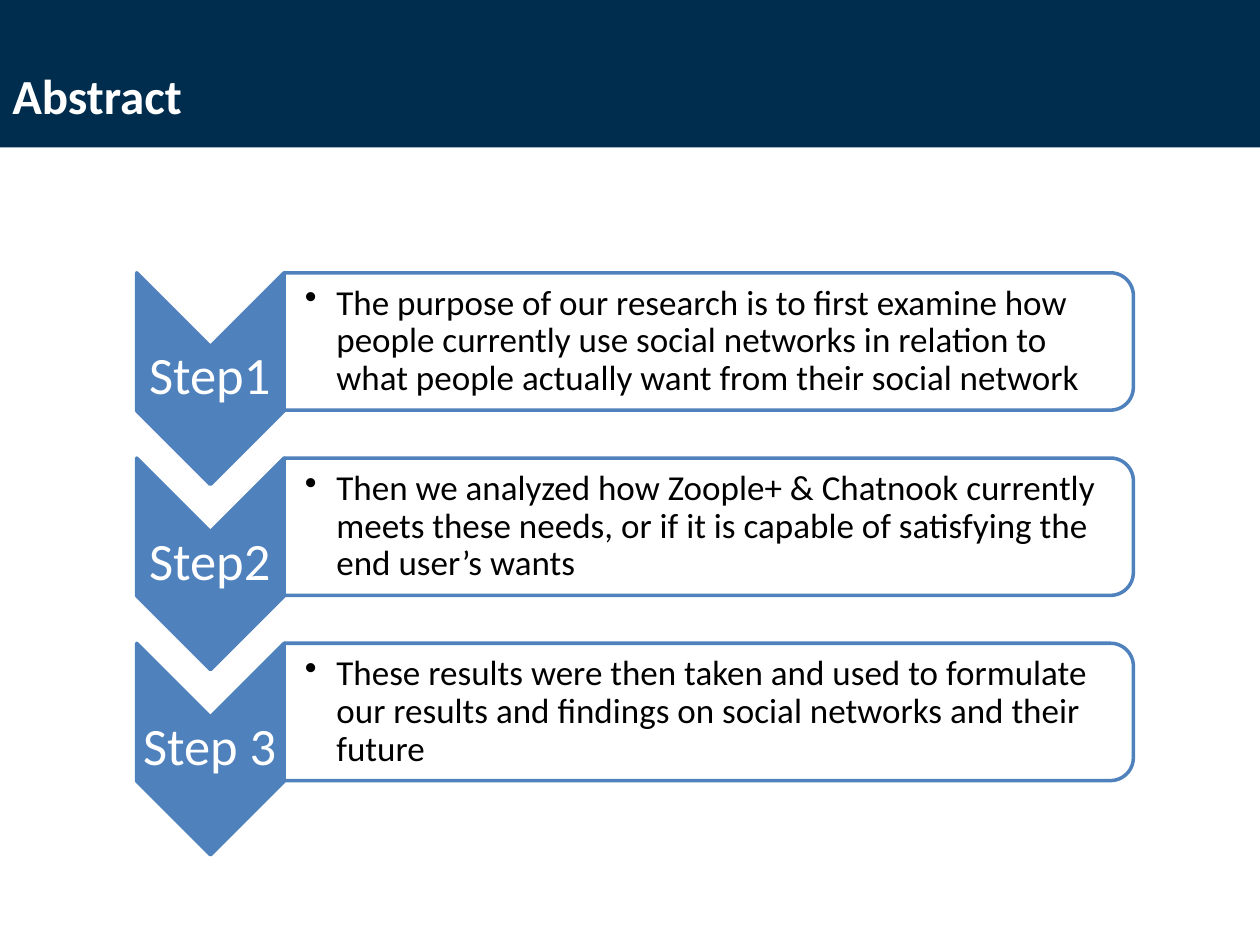
"""Build the abstract slide: a title band and three chevron steps."""
from dataclasses import dataclass

from lxml import etree
from pptx import Presentation
from pptx import util as u
from pptx.dml.color import RGBColor
from pptx.enum import shapes, text
from pptx.oxml.ns import qn


@dataclass(frozen=True)
class Theme:
    font: str = "Calibri"
    navy: str = "002C4D"
    blue: str = "4F81BD"
    white: str = "FFFFFF"
    black: str = "000000"
    title_size: int = 28
    step_size: int = 30
    body_size: int = 20
    outline: int = 2
    panel_alpha: int = 90


class SlideBuilder:
    def __init__(self, slide, theme):
        self.slide = slide
        self.theme = theme

    def shape(self, preset, box, fill, line=None, rotation=0, alpha=None):
        item = self.slide.shapes.add_shape(preset, *map(u.Inches, box))
        item.shadow.inherit = False
        item.rotation = rotation
        item.fill.solid()
        item.fill.fore_color.rgb = RGBColor.from_string(fill)
        if alpha is not None:
            color = item.fill._xPr.find(qn("a:solidFill"))[0]
            etree.SubElement(color, qn("a:alpha"), val=str(alpha * 1000))
        if line:
            item.line.color.rgb = RGBColor.from_string(line)
            item.line.width = u.Pt(self.theme.outline)
        else:
            item.line.fill.background()
        return item

    def text(self, box, words, size, color, anchor=text.MSO_ANCHOR.MIDDLE,
             insets=(0.1, 0.05, 0.1, 0.05), bold=False):
        frame = self.slide.shapes.add_textbox(*map(u.Inches, box)).text_frame
        frame.word_wrap = True
        frame.vertical_anchor = anchor
        (frame.margin_left, frame.margin_top,
         frame.margin_right, frame.margin_bottom) = map(u.Inches, insets)
        paragraph = frame.paragraphs[0]
        run = paragraph.add_run()
        run.text = words
        run.font.name = self.theme.font
        run.font.size = u.Pt(size)
        run.font.bold = bold
        run.font.color.rgb = RGBColor.from_string(color)
        return paragraph

    def title(self, words):
        theme = self.theme
        self.shape(shapes.MSO_SHAPE.RECTANGLE, (0, 0, 10, 1.17), theme.navy)
        self.text((0, 0.47, 10, 0.57), words, theme.title_size, theme.white,
                  text.MSO_ANCHOR.BOTTOM, bold=True)

    def chevron(self, top, label):
        theme = self.theme
        self.shape(shapes.MSO_SHAPE.CHEVRON, (0.83, top, 1.68, 1.17),
                   theme.blue, theme.blue, rotation=90)
        paragraph = self.text((1.08, top + 0.33, 1.17, 0.5), label,
                              theme.step_size, theme.white, insets=(0.02,) * 4)
        paragraph.alignment = text.PP_ALIGN.CENTER
        paragraph.line_spacing = 0.9

    def panel(self, top, words):
        theme = self.theme
        self.shape(shapes.MSO_SHAPE.ROUND_2_SAME_RECTANGLE,
                   (5.08, top - 3.08, 1.09, 6.74), theme.white, theme.blue,
                   rotation=90, alpha=theme.panel_alpha)
        paragraph = self.text((2.26, top - 0.2, 6.69, 0.98), words,
                              theme.body_size, theme.black,
                              insets=(0.16, 0.01, 0.01, 0.01))
        paragraph.level = 1
        paragraph.line_spacing = 0.9
        properties = paragraph._p.get_or_add_pPr()
        indent = u.Inches(0.25)
        properties.set("marL", str(indent))
        properties.set("indent", str(-indent))
        etree.SubElement(properties, qn("a:buChar"), char="•")


STEPS = (
    ("Step1", "The purpose of our research is to first examine how people "
              "currently use social networks in relation to what people "
              "actually want from their social network"),
    ("Step2", "Then we analyzed how Zoople+ & Chatnook currently meets these "
              "needs, or if it is capable of satisfying the end user’s wants"),
    ("Step 3", "These results were then taken and used to formulate our "
               "results and findings on social networks and their future"),
)
FIRST_TOP, STEP_PITCH = 2.42, 1.47


def main():
    deck = Presentation()
    deck.slide_width, deck.slide_height = u.Inches(10), u.Inches(7.5)
    builder = SlideBuilder(deck.slides.add_slide(deck.slide_layouts[6]), Theme())
    builder.title("Abstract")
    for index, (label, summary) in enumerate(STEPS):
        top = FIRST_TOP + index * STEP_PITCH
        builder.chevron(top, label)
        builder.panel(top, summary)
    deck.save("out.pptx")


if __name__ == "__main__":
    main()
